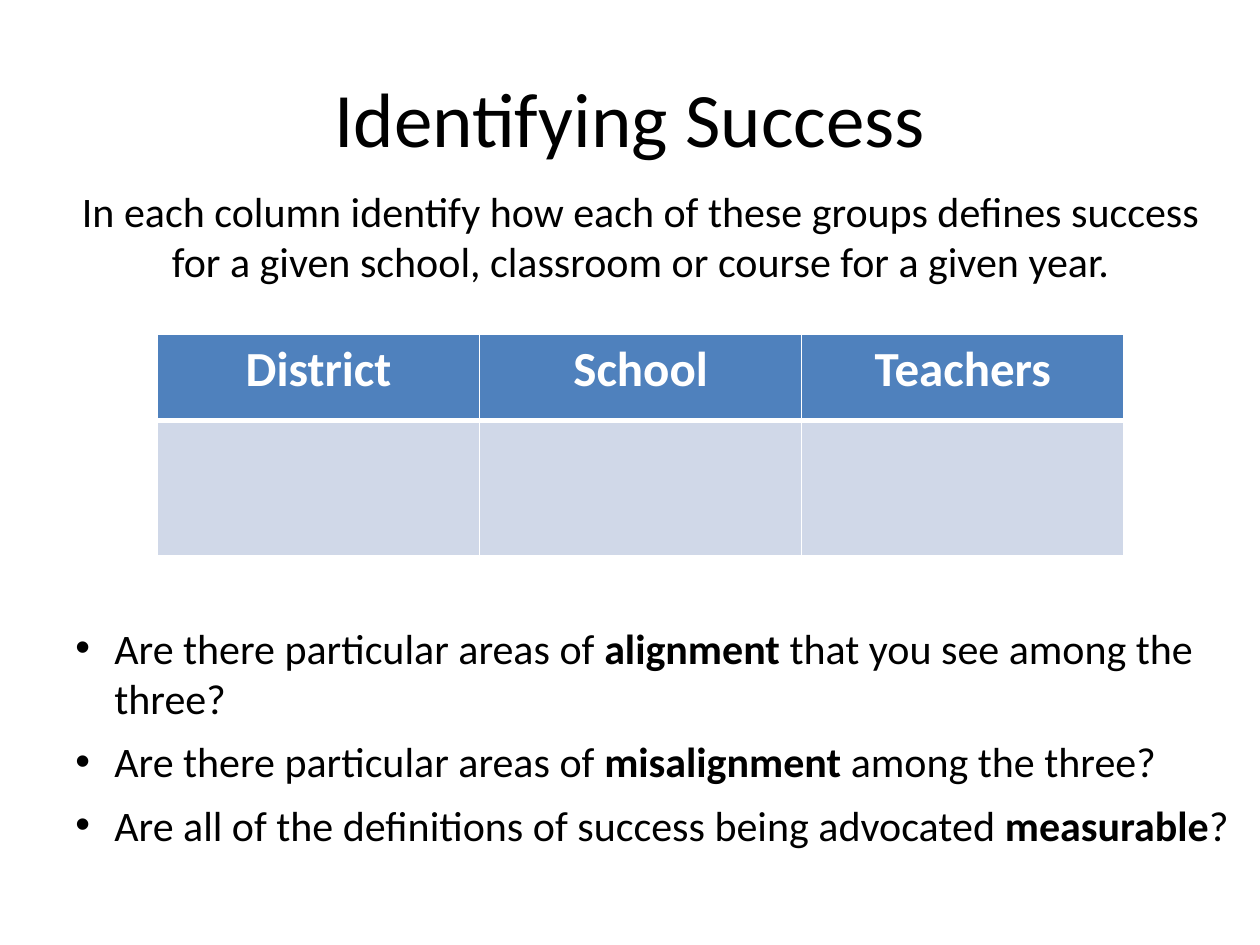
import dataclasses

import pptx
import pptx.dml.color
import pptx.enum.text
import pptx.oxml.ns
import pptx.util
from lxml import etree

WIDE, HIGH = pptx.util.Inches(10), pptx.util.Inches(7.5)
ALIGN = pptx.enum.text.PP_ALIGN
ANCHOR = pptx.enum.text.MSO_ANCHOR
qn = pptx.oxml.ns.qn


@dataclasses.dataclass(frozen=True)
class Theme:
    font: str = "Calibri"
    ink: str = "000000"
    white: str = "FFFFFF"
    head: str = "4F81BD"
    body: str = "D0D8E8"
    title_size: int = 44
    head_size: int = 28
    text_size: int = 24


THEME = Theme()
GROUPS = ["District", "School", "Teachers"]
# Each question: lead, bold word, tail
ASKS = [
    ("Are there particular areas of ", "alignment", " that you see among the three?"),
    ("Are there particular areas of ", "misalignment", " among the three?"),
    ("Are all of the definitions of success being advocated ", "measurable", "?"),
]


def share(left, top, width, height):
    """Turn percentages of the slide's size into lengths."""
    return (round(WIDE * left / 100), round(HIGH * top / 100),
            round(WIDE * width / 100), round(HIGH * height / 100))


def color(code):
    return pptx.dml.color.RGBColor.from_string(code)


def style(run, size, code=THEME.ink, bold=False):
    run.font.name = THEME.font
    run.font.size = pptx.util.Pt(size)
    run.font.color.rgb = color(code)
    run.font.bold = bold


def center(frame, text, size, code=THEME.ink, bold=False):
    frame.text = text
    para = frame.paragraphs[0]
    para.alignment = ALIGN.CENTER
    style(para.runs[0], size, code, bold)


def add_title(slide, text, box):
    title = slide.shapes.title
    title.left, title.top, title.width, title.height = box
    title.text_frame.vertical_anchor = ANCHOR.MIDDLE
    center(title.text_frame, text, THEME.title_size)


def add_box(slide, box):
    frame = slide.shapes.add_textbox(*box).text_frame
    frame.word_wrap = True
    return frame


def edge(cell, side, points):
    props = cell._tc.get_or_add_tcPr()
    line = etree.SubElement(props, qn(f"a:ln{side}"), w=str(pptx.util.Pt(points)))
    fill = etree.SubElement(line, qn("a:solidFill"))
    etree.SubElement(fill, qn("a:srgbClr"), val=THEME.white)


def add_grid(slide, heads, box, rows):
    table = slide.shapes.add_table(len(rows), len(heads), *box).table
    for row, part in zip(table.rows, rows):
        row.height = round(HIGH * part / 100)
    for col, head in enumerate(heads):
        center(table.cell(0, col).text_frame, head,
               THEME.head_size, THEME.white, True)
        for row in range(len(rows)):
            cell = table.cell(row, col)
            # A thick rule parts the head from the body
            edges = {"L": 1, "R": 1, "T": 3 if row == 1 else 1,
                     "B": 3 if row == 0 else 1}
            for side, points in edges.items():
                edge(cell, side, points)
            cell.fill.solid()
            cell.fill.fore_color.rgb = color(THEME.body if row else THEME.head)


def bullet(para, indent):
    props = para._p.get_or_add_pPr()
    props.set("marL", str(indent))
    props.set("indent", str(-indent))
    etree.SubElement(props, qn("a:buFont"), typeface="Arial")
    etree.SubElement(props, qn("a:buChar"), char="•")


def add_list(slide, items, box):
    frame = add_box(slide, box)
    for num, parts in enumerate(items):
        para = frame.add_paragraph() if num else frame.paragraphs[0]
        if num:
            para.space_before = pptx.util.Pt(7.3)
        bullet(para, pptx.util.Inches(0.31))
        for spot, text in enumerate(parts):
            run = para.add_run()
            run.text = text
            style(run, THEME.text_size, bold=spot == 1)


def main():
    deck = pptx.Presentation()
    deck.slide_width, deck.slide_height = WIDE, HIGH
    slide = deck.slides.add_slide(deck.slide_layouts[5])

    # Title and task
    add_title(slide, "Identifying Success", share(5, 4, 90, 16.67))
    center(add_box(slide, share(4.2, 18.93, 93.3, 16.13)),
           "In each column identify how each of these groups defines success "
           "for a given school, classroom or course for a given year.",
           THEME.text_size)

    # Table to fill in, then questions
    add_grid(slide, GROUPS, share(12.5, 35.33, 76.7, 23.47), (9.2, 14.27))
    add_list(slide, ASKS, share(5, 65.2, 95, 30.93))
    deck.save("out.pptx")


if __name__ == "__main__":
    main()
